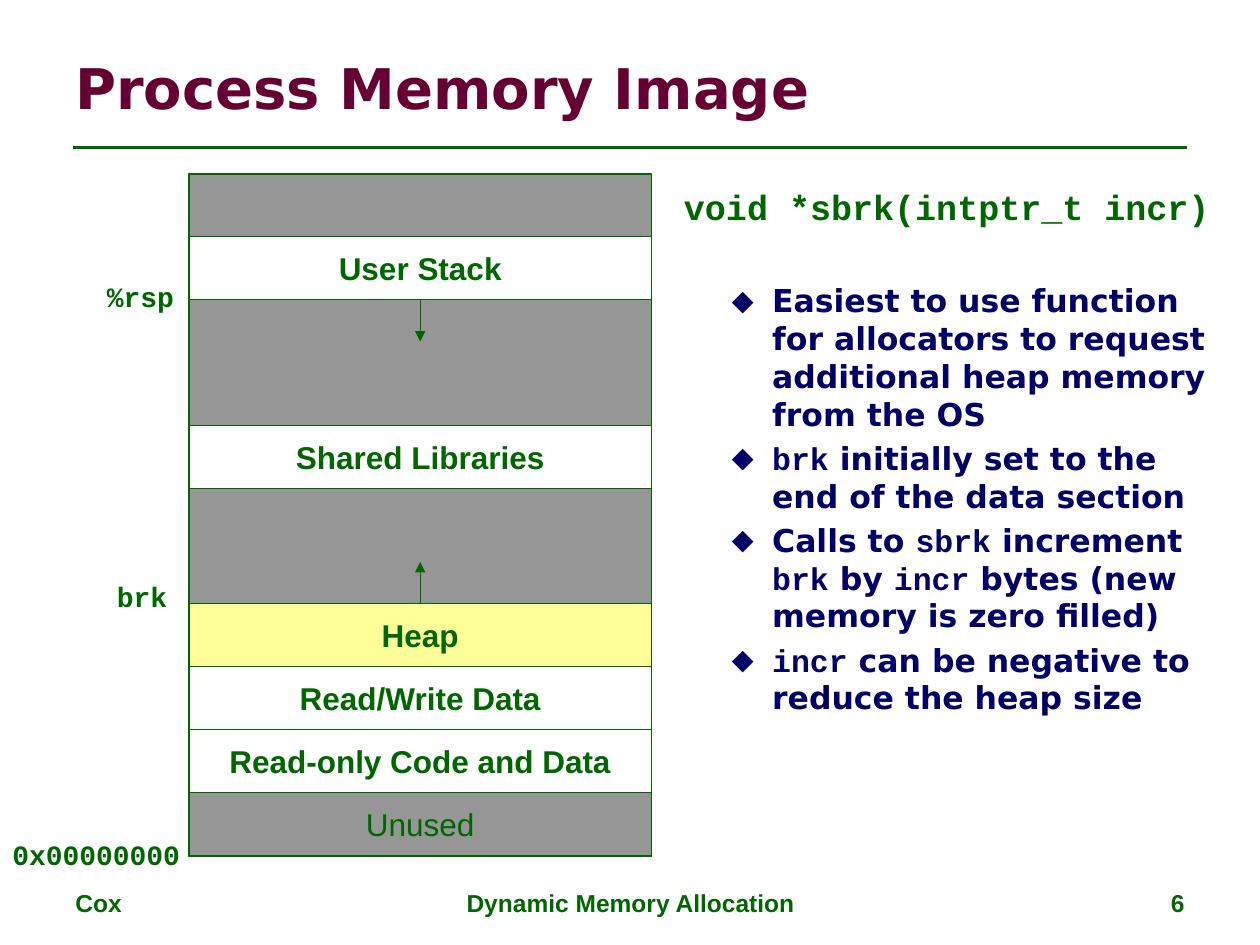
"""Build the process memory image slide."""
import pptx
import pptx.dml.color
import pptx.enum.shapes
import pptx.enum.text
import pptx.oxml
import pptx.oxml.ns
import pptx.util
from pptx.util import Inches

COLORS = {"green": "006600", "maroon": "660033", "navy": "000066",
          "gray": "969696", "white": "FFFFFF", "yellow": "FFFF99"}
MONO, SANS, HEAD = "Courier New", "Arial", "DejaVu Sans"
ALIGN = pptx.enum.text.PP_ALIGN
ANCHOR = pptx.enum.text.MSO_ANCHOR


def rgb(name):
    """Return the named colour."""
    return pptx.dml.color.RGBColor.from_string(COLORS[name])


def element(xml):
    """Parse one DrawingML element."""
    return pptx.oxml.parse_xml(xml.replace(" ", f" {pptx.oxml.ns.nsdecls('a')} ", 1))


class Deck:
    """Hold the style and the current slide."""

    def __init__(self):
        """Start a presentation with one blank slide."""
        self.prs = pptx.Presentation()
        self.prs.slide_width, self.prs.slide_height = Inches(10), Inches(7.5)
        self.s = self.prs.slides.add_slide(self.prs.slide_layouts[6])

    def run(self, p, text, size, font=SANS, color="green", bold=True):
        """Add one formatted run."""
        r = p.add_run()
        r.text = text
        r.font.size, r.font.name, r.font.bold = pptx.util.Pt(size), font, bold
        r.font.color.rgb = rgb(color)

    def box(self, x, y, w, h, wrap=True, anchor=ANCHOR.TOP):
        """Add an empty text box and return its frame."""
        tf = self.s.shapes.add_textbox(Inches(x), Inches(y), Inches(w), Inches(h)).text_frame
        tf.word_wrap, tf.vertical_anchor = wrap, anchor
        return tf

    def text(self, x, y, w, h, text, size, align=ALIGN.LEFT, wrap=True,
             anchor=ANCHOR.TOP, **style):
        """Add a text box with one line."""
        p = self.box(x, y, w, h, wrap, anchor).paragraphs[0]
        p.alignment = align
        self.run(p, text, size, **style)

    def rect(self, x, y, w, h, fill=None, text=None, bold=True):
        """Add an outlined rectangle with an optional centred label."""
        sp = self.s.shapes.add_shape(pptx.enum.shapes.MSO_SHAPE.RECTANGLE,
                                     Inches(x), Inches(y), Inches(w), Inches(h))
        sp.shadow.inherit = False
        if fill:
            sp.fill.solid()
            sp.fill.fore_color.rgb = rgb(fill)
        else:
            sp.fill.background()
        sp.line.color.rgb, sp.line.width = rgb("green"), pptx.util.Pt(0.75)
        if text:
            tf = sp.text_frame
            tf.word_wrap, tf.vertical_anchor = False, ANCHOR.MIDDLE
            tf.paragraphs[0].alignment = ALIGN.CENTER
            self.run(tf.paragraphs[0], text, 18, bold=bold)
        return sp

    def line(self, x1, y1, x2, y2, width=0.75, arrow=False, start=None):
        """Add a straight line, optionally with an arrowhead and a joined start."""
        c = self.s.shapes.add_connector(pptx.enum.shapes.MSO_CONNECTOR.STRAIGHT,
                                        Inches(x1), Inches(y1), Inches(x2), Inches(y2))
        c.line.color.rgb, c.line.width = rgb("green"), pptx.util.Pt(width)
        if arrow:
            c.line._get_or_add_ln().append(element('<a:tailEnd type="triangle"/>'))
        c._element.spPr.append(element("<a:effectLst />"))
        if start:
            c.begin_connect(*start)

    def bullet(self, tf, parts, before):
        """Add a bullet whose parts alternate between prose and code."""
        p = tf.add_paragraph()
        p.space_before = pptx.util.Pt(before)
        pPr = p._p.get_or_add_pPr()
        pPr.set("marL", str(Inches(0.7)))
        pPr.set("indent", str(Inches(-0.32)))
        for xml in ('<a:buSzPct val="90000"/>', f'<a:buFont typeface="{HEAD}"/>',
                    '<a:buChar char="◆"/>'):
            pPr.append(element(xml))
        for i, part in enumerate(parts):
            if part:
                self.run(p, part, 18, MONO if i % 2 else HEAD, "navy")


def main():
    """Build and save the slide."""
    d = Deck()
    d.line(0.58, 1.17, 9.42, 1.17, width=1.5)
    for x, w, text, align in [(0.5, 2.33, "Cox", ALIGN.LEFT),
                              (3.42, 3.17, "Dynamic Memory Allocation", ALIGN.CENTER),
                              (7.17, 2.33, "6", ALIGN.RIGHT)]:
        d.text(x, 7, w, 0.35, text, 14, align)
    d.text(0.5, 0.3, 9, 0.78, "Process Memory Image", 32, anchor=ANCHOR.MIDDLE,
           font=HEAD, color="maroon")

    tf = d.box(5.33, 1.42, 4.42, 5.28)
    tf.paragraphs[0].space_before = pptx.util.Pt(4)
    d.run(tf.paragraphs[0], "void *sbrk(intptr_t incr)", 20, MONO)
    bullets = [
        ["Easiest to use function for allocators to request additional heap memory from the OS"],
        ["", "brk", " initially set to the end of the data section"],
        ["Calls to ", "sbrk", " increment ", "brk", " by ", "incr",
         " bytes (new memory is zero filled)"],
        ["", "incr", " can be negative to reduce the heap size"]]
    for i, parts in enumerate(bullets):
        d.bullet(tf, parts, 3.6 if i else 31)

    left, width, row = 1.5, 3.67, 0.5
    middle = left + width / 2
    d.rect(left, 1.38, width, 5.42, "gray")
    stack = d.rect(left, 1.88, width, row, "white", "User Stack")
    d.rect(left, 3.38, width, row, "white", "Shared Libraries")
    heap_top = 4.79
    heap = d.rect(left, heap_top, width, row, "yellow", "Heap")
    segments = [("white", "Read/Write Data", True),
                ("white", "Read-only Code and Data", True), (None, "Unused", False)]
    for i, (fill, text, bold) in enumerate(segments, 1):
        d.rect(left, heap_top + i * row, width, row, fill, text, bold)
    d.line(middle, heap_top, middle, 4.46, arrow=True, start=(heap, 0))
    d.line(middle, 2.38, middle, 2.71, arrow=True, start=(stack, 2))

    for x, y, w, text in [(0.75, 2.17, 0.74, "%rsp"), (0, 6.6, 1.54, "0x00000000"),
                          (0.83, 4.55, 0.6, "brk")]:
        d.text(x, y, w, 0.37, text, 16, wrap=False, font=MONO)
    d.prs.save("out.pptx")


if __name__ == "__main__":
    main()
